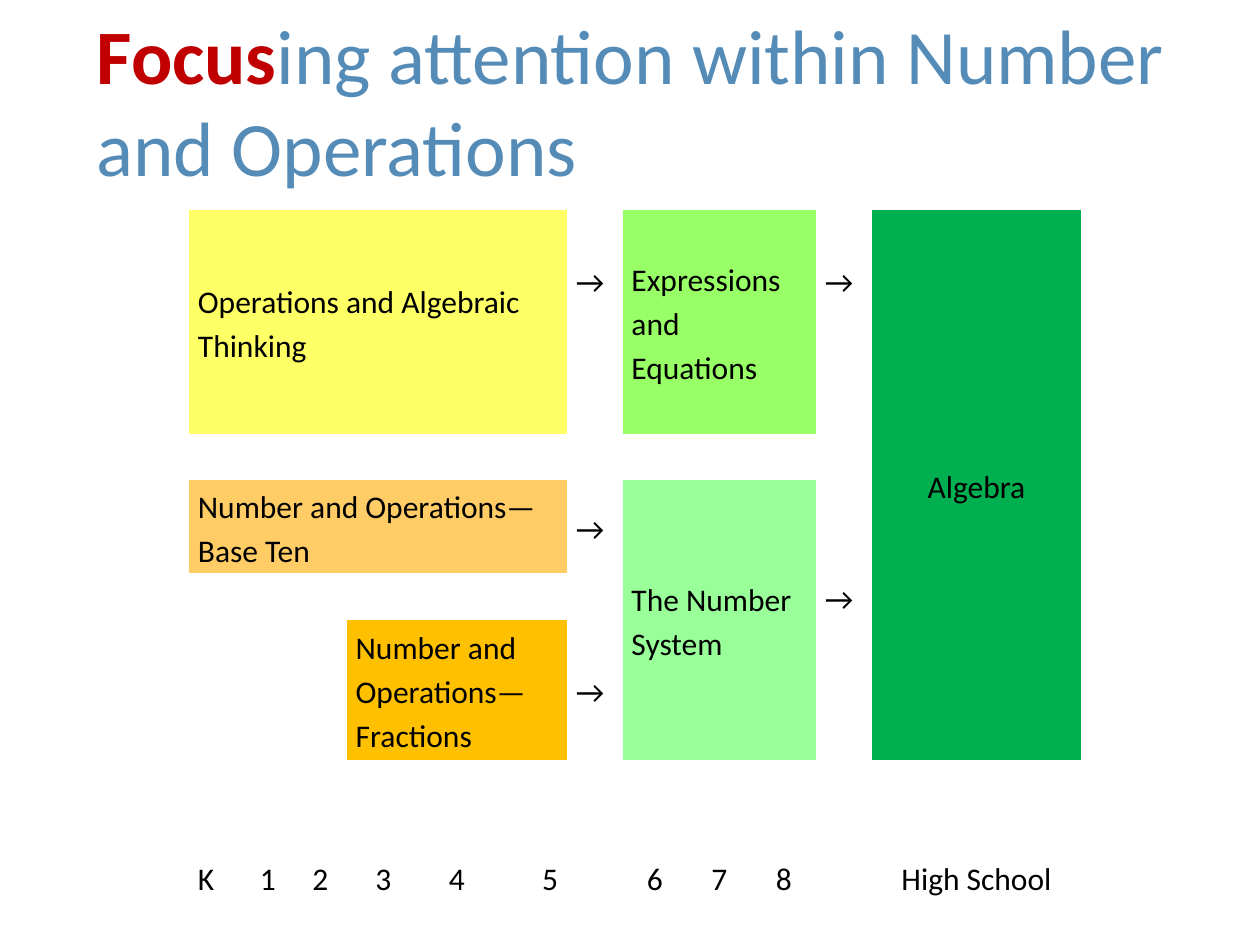
from pptx import Presentation
from pptx.util import Cm, Pt
from pptx.dml.color import RGBColor
from pptx.enum.text import PP_ALIGN as Al, MSO_ANCHOR as Anc

RED = RGBColor(0xC0, 0x00, 0x00)
BLUE = RGBColor(0x54, 0x8B, 0xB7)
BLACK = RGBColor(0x00, 0x00, 0x00)
YELLOW = RGBColor(0xFF, 0xFF, 0x66)
LIME = RGBColor(0x99, 0xFF, 0x66)
GREEN = RGBColor(0x00, 0xB0, 0x50)
PEACH = RGBColor(0xFF, 0xCC, 0x66)
MINT = RGBColor(0x99, 0xFF, 0x99)
GOLD = RGBColor(0xFF, 0xC0, 0x00)
PLAIN = "{2D5ABB26-0587-4C30-8999-92F81FD0307C}"


def write(para, words, size=18, color=BLACK, bold=False, align=Al.LEFT, lead=1.15, gap=0):
    para.alignment = align
    para.line_spacing = lead
    para.space_before = para.space_after = Pt(gap)
    run = para.add_run()
    run.text = words
    run.font.name = "Calibri"
    run.font.size = Pt(size)
    run.font.bold = bold
    run.font.color.rgb = color


deck = Presentation()
deck.slide_width = Cm(25.4)
deck.slide_height = Cm(19.05)
slide = deck.slides.add_slide(deck.slide_layouts[6])

title = slide.shapes.add_textbox(Cm(1.7), Cm(0.64), Cm(22.66), Cm(2.74)).text_frame
title.word_wrap = True
title.vertical_anchor = Anc.MIDDLE
head = title.paragraphs[0]
write(head, "Focus", size=44, color=RED, bold=True, lead=1.0)
write(head, "ing attention within Number and Operations", size=44, color=BLUE, lead=1.0)

wide = [1.06] * 4 + [1.48] * 3 + [1.12] + [1.3] * 3 + [1.12, 4.23]
high = [0.94] * 4 + [1.88, 0.94, 2.82] + [0.94] * 3
frame = slide.shapes.add_table(len(high), len(wide), Cm(2.75), Cm(4.23), Cm(sum(wide)), Cm(sum(high)))
grid = frame.table
grid.first_row = grid.horz_banding = False
grid._tbl.tblPr[0].text = PLAIN
for col, size in zip(grid.columns, wide):
    col.width = Cm(size)
for row, size in zip(grid.rows, high):
    row.height = Cm(size)
for cell in grid.iter_cells():
    cell.margin_left = cell.margin_right = Cm(0.18)
    cell.margin_top = cell.margin_bottom = 0
    cell.vertical_anchor = Anc.MIDDLE
    cell.fill.background()

boxes = [
    (0, 1, 3, 6, "Operations and Algebraic Thinking", YELLOW, {}),
    (0, 8, 3, 3, "Expressions and Equations", LIME, {}),
    (0, 12, 7, 1, "Algebra", GREEN, {"align": Al.CENTER}),
    (4, 1, 1, 6, "Number and Operations—Base Ten", PEACH, {"gap": 6}),
    (4, 8, 3, 3, "The Number System", MINT, {}),
    (6, 4, 1, 3, "Number and Operations—Fractions", GOLD, {}),
]
for top, left, down, over, words, color, form in boxes:
    cell = grid.cell(top, left)
    cell.merge(grid.cell(top + down - 1, left + over - 1))
    cell.fill.solid()
    cell.fill.fore_color.rgb = color
    write(cell.text_frame.paragraphs[0], words, **form)

for top, left in [(1, 7), (1, 11), (4, 7), (5, 11), (6, 7)]:
    write(grid.cell(top, left).text_frame.paragraphs[0], "→")

sides = {"K": Al.LEFT, "5": Al.RIGHT}
grades = dict(zip([1, 2, 3, 4, 5, 6, 8, 9, 10, 12], [*"K12345678", "High School"]))
for left, grade in grades.items():
    para = grid.cell(9, left).text_frame.paragraphs[0]
    write(para, grade, align=sides.get(grade, Al.CENTER))

deck.save("out.pptx")
